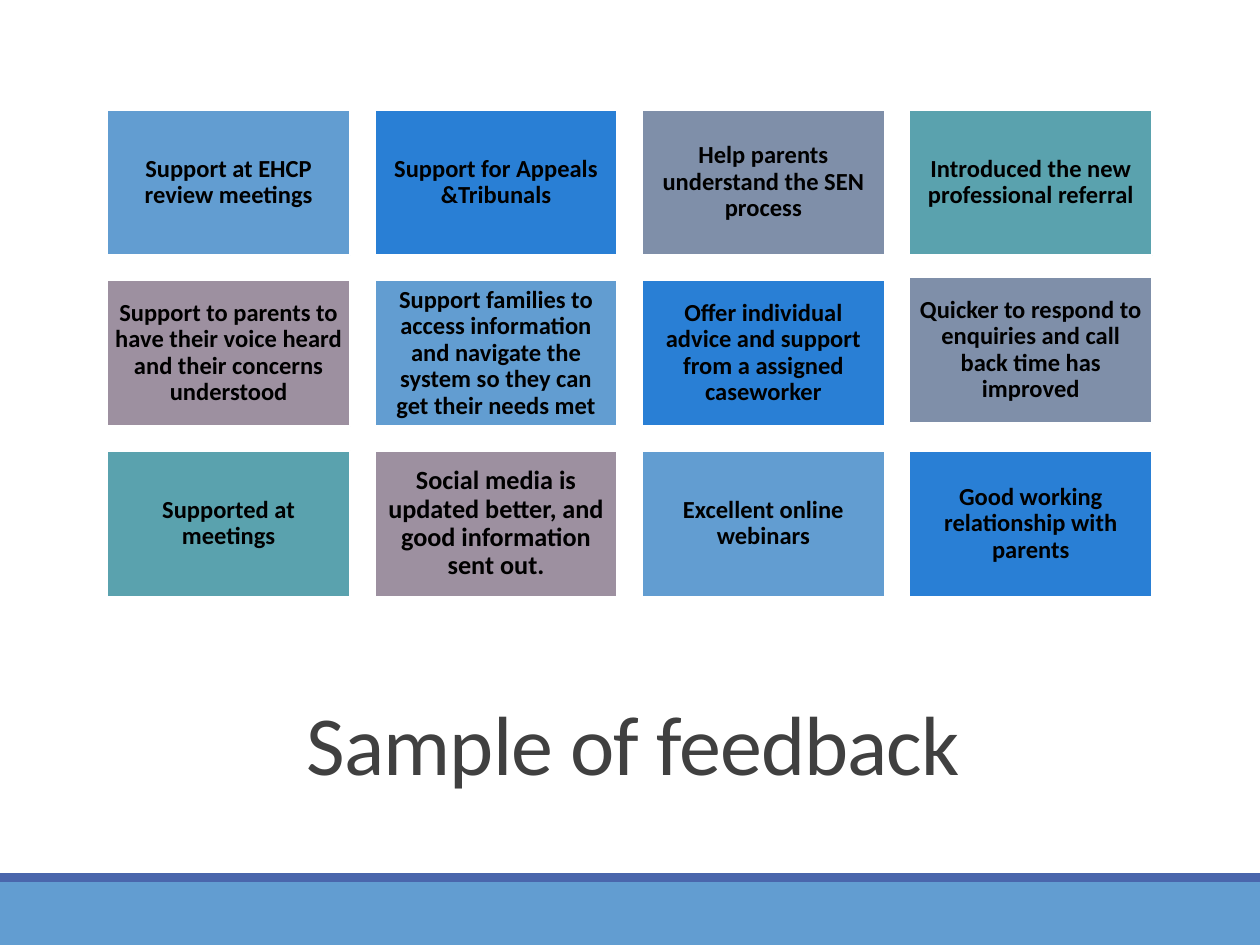
from dataclasses import dataclass
from itertools import cycle

from pptx import Presentation
from pptx.dml.color import RGBColor
from pptx.enum.shapes import MSO_SHAPE as Preset
from pptx.enum.text import MSO_ANCHOR as Anchor, PP_ALIGN as Align
from pptx.util import Cm, Pt


@dataclass(frozen=True)
class Theme:
    font: str = "Calibri"
    ink: str = "000000"
    title_ink: str = "404040"
    outline: str = "FFFFFF"
    band: str = "629DD1"
    band_edge: str = "4A66AC"
    tiles: tuple = ("629DD1", "297FD5", "7F8FA9", "5AA2AE", "9D90A0")
    title_size: int = 48
    tile_size: int = 14
    large_tile_size: int = 15


theme = Theme()


def add_rectangle(page, left, top, width, height, fill):
    box = page.shapes.add_shape(Preset.RECTANGLE, Cm(left), Cm(top), Cm(width), Cm(height))
    box.shadow.inherit = False
    box.fill.solid()
    box.fill.fore_color.rgb = RGBColor.from_string(fill)
    box.line.fill.background()
    return box


def write_text(box, text, *, size, color, bold=False, line_spacing=0.9, margin=0.15, tracking=0):
    frame = box.text_frame
    frame.word_wrap = True
    frame.vertical_anchor = Anchor.MIDDLE
    frame.margin_left = frame.margin_right = Cm(margin)
    frame.margin_top = frame.margin_bottom = Cm(margin)
    para = frame.paragraphs[0]
    para.alignment = Align.CENTER
    para.line_spacing = line_spacing
    span = para.add_run()
    span.text = text
    span.font.name = theme.font
    span.font.size = Pt(size)
    span.font.bold = bold
    span.font.color.rgb = RGBColor.from_string(color)
    if tracking:
        span.font._element.set("spc", str(round(tracking * 100)))


deck = Presentation()
deck.slide_width, deck.slide_height = Cm(25.4), Cm(19.05)
page = deck.slides.add_slide(deck.slide_layouts[6])

add_rectangle(page, 0, 17.78, 25.4, 1.27, theme.band)
add_rectangle(page, 0, 17.6, 25.4, 0.18, theme.band_edge)

title = page.shapes.add_textbox(Cm(2.29), Cm(13.46), Cm(20.95), Cm(3.3))
write_text(title, "Sample of feedback", size=theme.title_size, color=theme.title_ink,
           line_spacing=0.85, tracking=-0.5)

feedback = [
    ["Support at EHCP review meetings",
     "Support for Appeals &Tribunals",
     "Help parents understand the SEN process",
     "Introduced the new professional referral"],
    ["Support to parents to have their voice heard and their concerns understood",
     "Support families to access information and navigate the system so they can get their needs met",
     "Offer individual advice and support from a assigned caseworker",
     "Quicker to respond to enquiries and call back time has improved"],
    ["Supported at meetings",
     "Social media is updated better, and good information sent out.",
     "Excellent online webinars",
     "Good working relationship with parents"],
]
grid_left, grid_top = 2.16, 2.21
tile_width, tile_height = 4.9, 2.94
column_step, row_step = 5.39, 3.44
raised_tiles = {(1, 3): 0.06}
large_tiles = {(2, 1)}

fills = cycle(theme.tiles)
for row, texts in enumerate(feedback):
    for column, text in enumerate(texts):
        top = grid_top + row * row_step - raised_tiles.get((row, column), 0)
        tile = add_rectangle(page, grid_left + column * column_step, top,
                             tile_width, tile_height, next(fills))
        tile.line.color.rgb = RGBColor.from_string(theme.outline)
        tile.line.width = Pt(1.25)
        size = theme.large_tile_size if (row, column) in large_tiles else theme.tile_size
        write_text(tile, text, size=size, color=theme.ink, bold=True)

deck.save("out.pptx")
